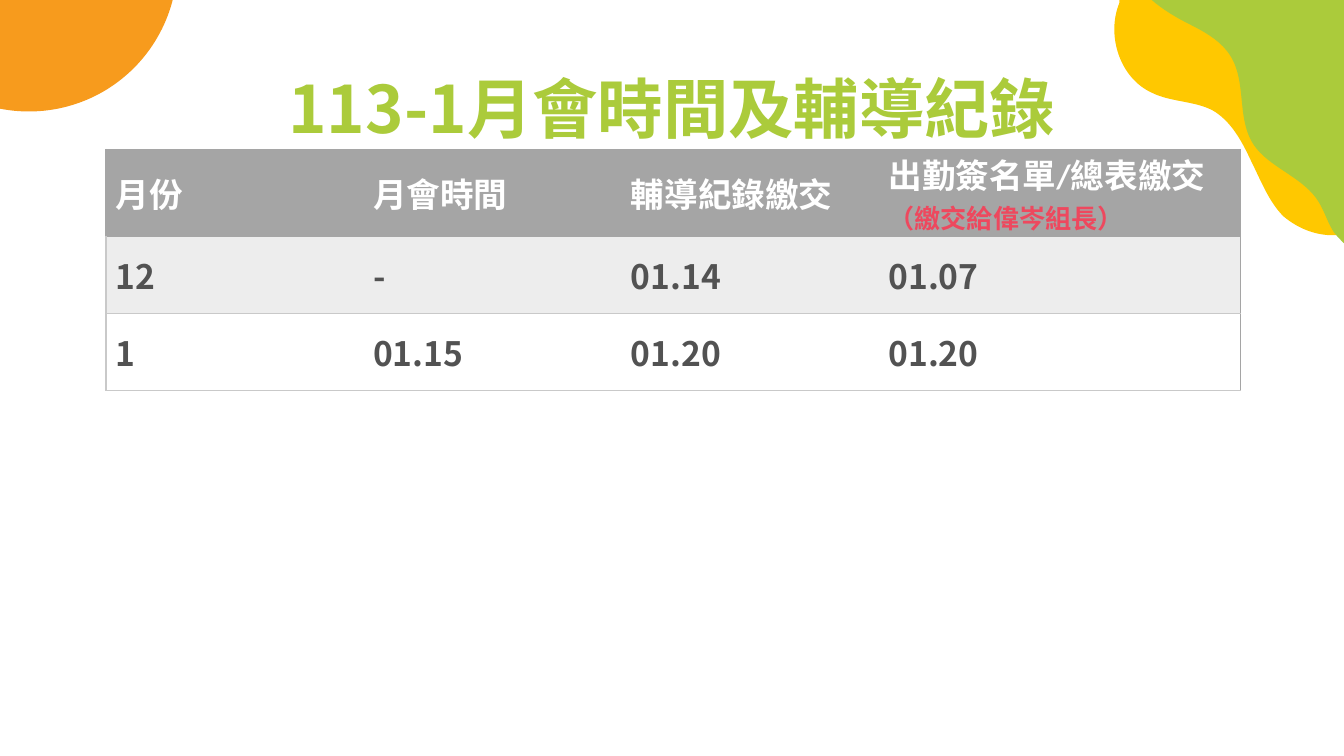
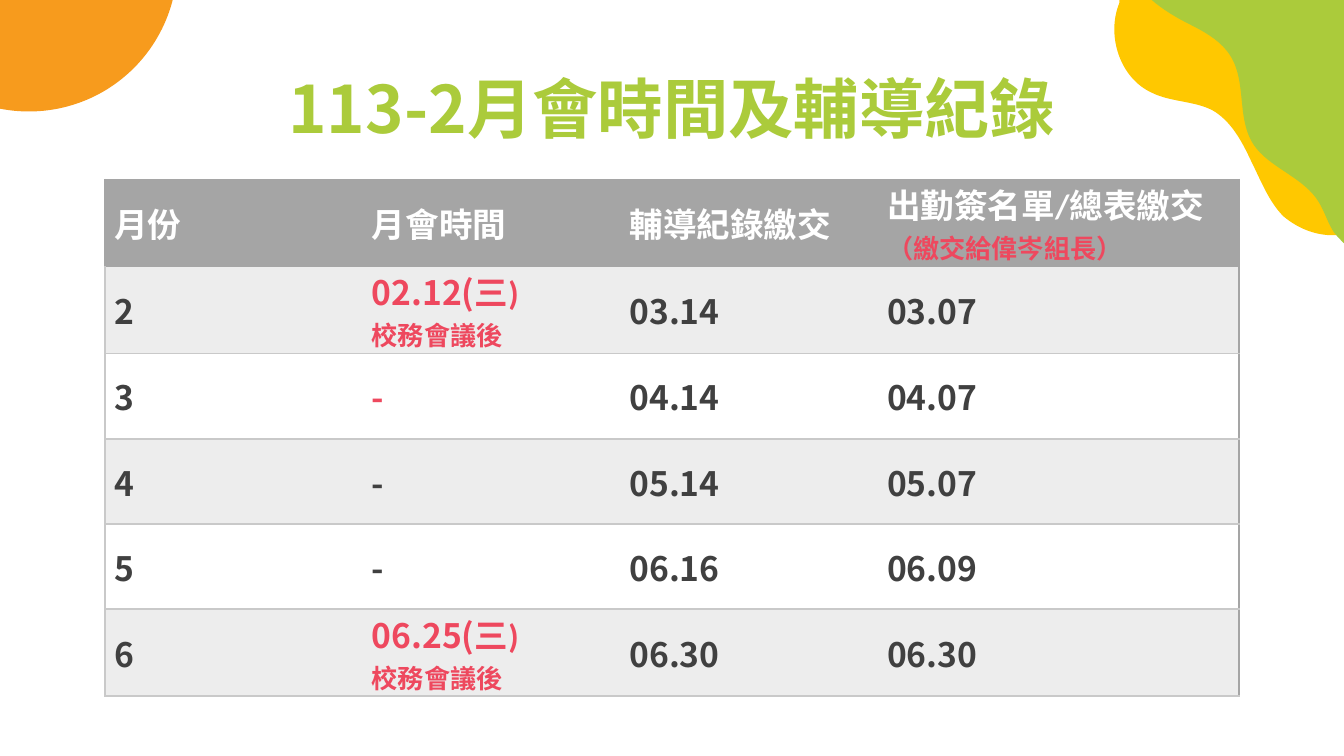
from dataclasses import dataclass

from lxml import etree
from pptx import Presentation
from pptx.dml.color import RGBColor
from pptx.enum.shapes import MSO_SHAPE
from pptx.enum.text import MSO_ANCHOR, PP_ALIGN
from pptx.oxml.ns import qn
from pptx.util import Inches, Pt

OVAL = MSO_SHAPE.OVAL
MIDDLE = MSO_ANCHOR.MIDDLE
CENTER, JUSTIFY = PP_ALIGN.CENTER, PP_ALIGN.JUSTIFY


@dataclass(frozen=True)
class Theme:
    """Colours, fonts and type sizes shared by the slides."""
    green: str = "ABCB3B"
    yellow: str = "FFC800"
    orange: str = "F79B1D"
    red: str = "EE485E"
    white: str = "FFFFFF"
    header: str = "A5A5A5"
    band: str = "EDEDED"
    rule: str = "C9C9C9"
    sans: str = "Noto Sans CJK SC"
    latin: str = "Calibri"
    title: int = 35
    body: int = 18
    small: int = 14
    line: int = 1


T = Theme()
WIDTH = Inches(10)
COLUMNS = (19.17, 19.17, 19.17, 26.9)
TWO_LINES = 6.47

YELLOW_BLOB = ((83.3, 0), [
    (83.3, 0.1, 83.3, 0.1, 83.3, 0.2), (82.3, 2.6, 83.3, 5.8, 85.7, 6.9),
    (87.1, 7.6, 88.8, 7.5, 90.2, 8.2), (91.6, 9, 92.4, 10.5, 93.1, 12),
    (93.8, 13.4, 94.4, 15, 95.5, 16.1), (96.7, 17.1, 98.1, 17.6, 99.6, 17.5),
    (99.7, 17.5, 99.9, 17.4, 100, 17.4)])
GREEN_BLOB = ((85.7, 0), [
    (86.5, 0.7, 87.5, 1.3, 88.5, 1.8), (89.5, 2.3, 90.6, 2.9, 91.3, 3.8),
    (92.9, 5.8, 91.9, 8.7, 93.3, 10.8), (94.4, 12.4, 96.7, 13.1, 97.9, 14.7),
    (98.5, 15.5, 98.7, 16.4, 99.2, 17.2), (99.4, 17.5, 99.7, 17.8, 100, 18.1)])

HEADINGS = ["月份", "月會時間", "輔導紀錄繳交",
            [[("出勤簽名單/總表繳交", {})],
             [("（繳交給偉岑組長）", {"size": T.small, "color": T.red})]]]


def u(share):
    """Turn hundredths of the slide's width into a length."""
    return round(WIDTH * share / 100)


def rgb(color):
    """Read a hexadecimal colour."""
    return RGBColor.from_string(color)


def paint(shape, color):
    """Give a shape a plain fill without line or shadow."""
    shape.shadow.inherit = False
    shape.fill.solid()
    shape.fill.fore_color.rgb = rgb(color)
    shape.line.fill.background()


def add_run(p, text, size=T.body, color=T.white, font=T.sans):
    """Add one bold run with its Latin and East Asian fonts."""
    r = p.add_run()
    r.text = text
    r.font.size, r.font.bold, r.font.name = Pt(size), True, font
    r.font.color.rgb = rgb(color)
    etree.SubElement(r.font._element, qn("a:ea"), typeface=T.sans)


def bend(shape, count):
    """Join the first straight segments by threes into cubic curves."""
    segments = list(shape._element.iter(qn("a:lnTo")))[:3 * count]
    for i in range(0, len(segments), 3):
        curve = etree.Element(qn("a:cubicBezTo"))
        segments[i].addprevious(curve)
        for segment in segments[i:i + 3]:
            curve.append(segment[0])
            segment.getparent().remove(segment)


def add_blob(s, blob, color):
    """Draw a curved outline closed at the top right corner."""
    (x, y), curves = blob
    points = [pt for c in curves for pt in zip(c[::2], c[1::2])] + [(100, 0)]
    builder = s.shapes.build_freeform(u(x), u(y))
    builder.add_line_segments([(u(px), u(py)) for px, py in points], close=True)
    shape = builder.convert_to_shape()
    bend(shape, len(curves))
    paint(shape, color)


def add_decor(s):
    """Draw the coloured corner shapes."""
    add_blob(s, YELLOW_BLOB, T.yellow)
    add_blob(s, GREEN_BLOB, T.green)
    paint(s.shapes.add_shape(OVAL, u(-8.9), u(-13.8), u(22.1), u(22.1)), T.orange)


def add_title(s, text):
    """Add the centred slide title."""
    tf = s.shapes.add_textbox(u(7.9), u(4.87), u(84.2), u(6.3)).text_frame
    tf.word_wrap, tf.vertical_anchor = True, MIDDLE
    tf.margin_left = tf.margin_right = tf.margin_top = tf.margin_bottom = u(1)
    p = tf.paragraphs[0]
    p.alignment = CENTER
    add_run(p, text, T.title, T.green)


def set_borders(cell, colors):
    """Set the left, right, top and bottom borders; None hides one."""
    tcPr = cell._tc.get_or_add_tcPr()
    for side, color in zip("LRTB", colors):
        ln = etree.SubElement(tcPr, qn(f"a:ln{side}"), w=str(Pt(T.line)))
        if color:
            fill = etree.SubElement(ln, qn("a:solidFill"))
            etree.SubElement(fill, qn("a:srgbClr"), val=color)
        else:
            etree.SubElement(ln, qn("a:noFill"))


def fill_cell(cell, paragraphs, fill, **style):
    """Write paragraphs of runs into a cell; a fill of None is clear."""
    if fill:
        cell.fill.solid()
        cell.fill.fore_color.rgb = rgb(fill)
    else:
        cell.fill.background()
    cell.vertical_anchor = MIDDLE
    cell.margin_left = cell.margin_right = u(0.7)
    cell.margin_top = cell.margin_bottom = 0
    tf = cell.text_frame
    for i, runs in enumerate(paragraphs):
        p = tf.add_paragraph() if i else tf.paragraphs[0]
        p.alignment = JUSTIFY
        for text, changes in runs:
            add_run(p, text, **{**style, **changes})


def as_paragraphs(content):
    """Turn plain text into one paragraph of one run."""
    return [[(content, {})]] if isinstance(content, str) else content


def add_schedule(s, left, top, row_height, rows, ink, plain):
    """Add a banded table under the common headings."""
    grid = [[as_paragraphs(c) for c in row] for row in (HEADINGS, *rows)]
    heights = [TWO_LINES if max(map(len, row)) > 1 else row_height for row in grid]
    table = s.shapes.add_table(len(grid), len(COLUMNS), u(left), u(top),
                               u(sum(COLUMNS)), u(sum(heights))).table
    table.first_row = table.horz_banding = False
    for column, width in zip(table.columns, COLUMNS):
        column.width = u(width)
    last = len(COLUMNS) - 1
    for i, contents in enumerate(grid):
        table.rows[i].height = u(heights[i])
        edge = T.rule if i else T.header
        above = T.rule if i > 1 else T.header
        fill = (T.band if i % 2 else plain) if i else T.header
        style = {"color": ink} if i else {"font": T.latin}
        for j, paragraphs in enumerate(contents):
            cell = table.cell(i, j)
            set_borders(cell, (None if j else edge,
                               T.header if j == last else None, above, edge))
            fill_cell(cell, paragraphs, fill, **style)


def meeting(date):
    """Describe a Wednesday meeting held after the school assembly."""
    return [[(date + "(", {"color": T.red}),
             ("三)", {"color": T.red, "font": T.latin})],
            [("校務會議後", {"color": T.red, "size": T.small, "font": T.latin})]]


def add_term(prs, term, **schedule):
    """Add the slide of one school term."""
    s = prs.slides.add_slide(prs.slide_layouts[6])
    add_decor(s)
    add_title(s, f"{term}月會時間及輔導紀錄")
    add_schedule(s, **schedule)


def main():
    """Build and save the two term slides."""
    prs = Presentation()
    prs.slide_width, prs.slide_height = WIDTH, u(56.25)
    add_term(prs, "113-1", left=7.9, top=11.13, row_height=5.73,
             ink="525252", plain=T.white, rows=[
                 ["12", "-", "01.14", "01.07"],
                 ["1", "01.15", "01.20", "01.20"]])
    add_term(prs, "113-2", left=7.8, top=13.37, row_height=6.34,
             ink="404040", plain=None, rows=[
                 ["2", meeting("02.12"), "03.14", "03.07"],
                 ["3", [[("-", {"color": T.red})]], "04.14", "04.07"],
                 ["4", "-", "05.14", "05.07"],
                 ["5", "-", "06.16", "06.09"],
                 ["6", meeting("06.25"), "06.30", "06.30"]])
    prs.save("out.pptx")


if __name__ == "__main__":
    main()
